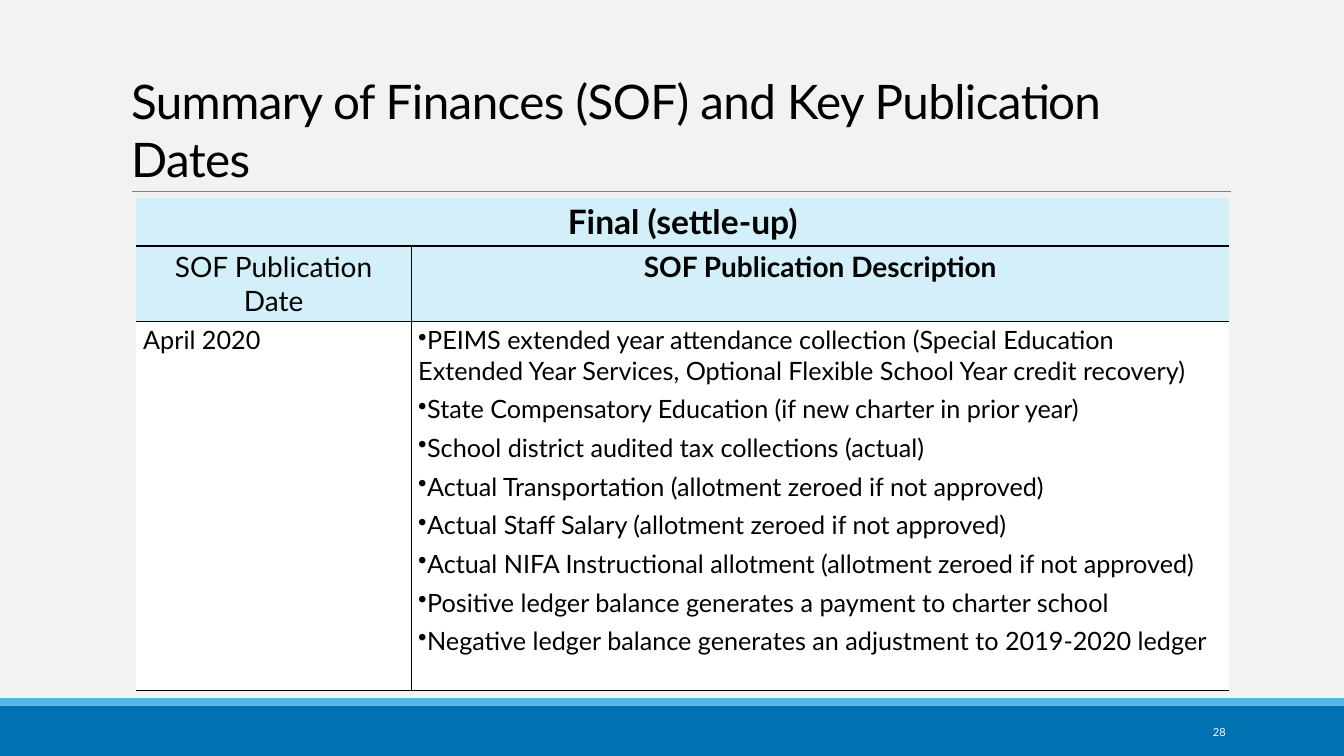
from dataclasses import dataclass

from lxml import etree
from pptx import Presentation
from pptx import util as u
from pptx.dml.color import RGBColor
from pptx.enum import shapes, text
from pptx.oxml.ns import qn

TITLE = "Summary of Finances (SOF) and Key Publication Dates"
PAGE_NUMBER = "28"
HEADING = "Final (settle-up)"
COLUMN_LABELS = ("SOF Publication Date", "SOF Publication Description")
DATE = "April 2020"
DESCRIPTIONS = (
    "PEIMS extended year attendance collection (Special Education Extended Year "
    "Services, Optional Flexible School Year credit recovery)",
    "State Compensatory Education (if new charter in prior year)",
    "School district audited tax collections (actual)",
    "Actual Transportation (allotment zeroed if not approved)",
    "Actual Staff Salary (allotment zeroed if not approved)",
    "Actual NIFA Instructional allotment (allotment zeroed if not approved)",
    "Positive ledger balance generates a payment to charter school",
    "Negative ledger balance generates an adjustment to 2019-2020 ledger",
)
COLUMN_WIDTHS = (6.93, 20.62)
ROW_HEIGHTS = (1.19, 1.07, 9.3)
SLIDE_WIDTH, SLIDE_HEIGHT = 33.87, 19.05
FOOTER_TOP, STRIP_HEIGHT = 17.78, 0.19


@dataclass(frozen=True)
class Theme:
    """Colours, font and type sizes of the slide."""
    font: str = "Lato"
    background: str = "F2F2F2"
    footer: str = "0072B2"
    strip: str = "56B4E9"
    rule: str = "808080"
    ink: str = "000000"
    paper: str = "FFFFFF"
    header: str = "D2EFFA"
    title_size: float = 34
    heading_size: float = 24
    label_size: float = 20
    body_size: float = 18
    number_size: float = 7.9


THEME = Theme()


def rgb(value):
    """Turn a hex string into a colour."""
    return RGBColor.from_string(value)


def box(left, top, width, height):
    """Give a position and size in centimetres."""
    return u.Cm(left), u.Cm(top), u.Cm(width), u.Cm(height)


def format_text(frame, size, color=THEME.ink, bold=False, align=text.PP_ALIGN.LEFT):
    """Format every paragraph and run of a text frame."""
    for paragraph in frame.paragraphs:
        paragraph.alignment = align
        for run in paragraph.runs:
            run.font.name = THEME.font
            run.font.size = u.Pt(size)
            run.font.bold = bold
            run.font.color.rgb = rgb(color)


def add_bar(slide, top, height, color):
    """Add a band across the full slide width."""
    bar = slide.shapes.add_shape(
        shapes.MSO_SHAPE.RECTANGLE, *box(0, top, SLIDE_WIDTH, height))
    bar.shadow.inherit = False
    bar.fill.solid()
    bar.fill.fore_color.rgb = rgb(color)
    bar.line.fill.background()


def add_rule(slide):
    """Add the thin line below the title."""
    rule = slide.shapes.add_connector(
        shapes.MSO_CONNECTOR.STRAIGHT, u.Cm(3.33), u.Cm(4.83), u.Cm(31.01), u.Cm(4.83))
    rule.line.color.rgb = rgb(THEME.rule)
    rule.line.width = u.Pt(0.5)
    etree.SubElement(rule._element.spPr, qn("a:effectLst"))


def add_title(slide):
    """Fill and place the title placeholder."""
    title = slide.shapes.title
    title.left, title.top, title.width, title.height = box(3.05, 0.79, 27.94, 4.04)
    frame = title.text_frame
    frame.text = TITLE
    frame.auto_size = text.MSO_AUTO_SIZE.NONE
    frame.vertical_anchor = text.MSO_ANCHOR.BOTTOM
    format_text(frame, THEME.title_size)
    frame.paragraphs[0].runs[0].font._element.set("spc", "-40")


def add_page_number(slide):
    """Add the page number in the footer."""
    frame = slide.shapes.add_textbox(*box(27.51, 17.93, 3.63, 1.02)).text_frame
    frame.word_wrap = True
    frame.vertical_anchor = text.MSO_ANCHOR.MIDDLE
    frame.text = PAGE_NUMBER
    format_text(frame, THEME.number_size, THEME.paper, align=text.PP_ALIGN.RIGHT)


def set_borders(cell, visible):
    """Draw the visible sides of a cell and clear the others."""
    properties = cell._tc.get_or_add_tcPr()
    for side in "LRTB":
        line = etree.SubElement(properties, qn(f"a:ln{side}"), w=str(u.Pt(1)))
        if side in visible:
            fill = etree.SubElement(line, qn("a:solidFill"))
            etree.SubElement(fill, qn("a:srgbClr"), val=THEME.ink)
        else:
            etree.SubElement(line, qn("a:noFill"))


def add_bullets(frame):
    """Turn the paragraphs of a frame into spaced bullets."""
    for index, paragraph in enumerate(frame.paragraphs):
        paragraph.level = 1
        properties = paragraph._p.get_or_add_pPr()
        properties.set("marL", "0")
        properties.set("indent", str(-u.Cm(0.97 if index else 0.79)))
        etree.SubElement(properties, qn("a:buChar"), char="•")
        if index:
            paragraph.space_before = u.Pt(6)


def add_schedule(slide):
    """Add the table of publication dates."""
    table = slide.shapes.add_table(
        3, 2, *box(3.43, 4.98, sum(COLUMN_WIDTHS), sum(ROW_HEIGHTS))).table
    table.first_row = table.horz_banding = False
    for column, width in zip(table.columns, COLUMN_WIDTHS):
        column.width = u.Cm(width)
    for row, height in zip(table.rows, ROW_HEIGHTS):
        row.height = u.Cm(height)
    table.cell(0, 0).merge(table.cell(0, 1))

    center, left = text.PP_ALIGN.CENTER, text.PP_ALIGN.LEFT
    cells = (
        (0, 0, HEADING, THEME.heading_size, True, center),
        (1, 0, COLUMN_LABELS[0], THEME.label_size, False, center),
        (1, 1, COLUMN_LABELS[1], THEME.label_size, True, center),
        (2, 0, DATE, THEME.body_size, False, left),
        (2, 1, "\n".join(DESCRIPTIONS), THEME.body_size, False, left),
    )
    for row, column, words, size, bold, align in cells:
        cell = table.cell(row, column)
        cell.margin_left = cell.margin_right = u.Cm(0.18)
        cell.margin_top = cell.margin_bottom = u.Cm(0.1)
        cell.text_frame.text = words
        format_text(cell.text_frame, size, bold=bold, align=align)
    add_bullets(table.cell(2, 1).text_frame)

    for row in range(3):
        for column in range(2):
            cell = table.cell(row, column)
            inner = ("R", "L")[column] if row else ""
            set_borders(cell, "B" + inner + ("T" if row else ""))
            cell.fill.solid()
            cell.fill.fore_color.rgb = rgb(THEME.header if row < 2 else THEME.paper)


def main():
    """Build the slide and save it."""
    presentation = Presentation()
    presentation.slide_width = u.Cm(SLIDE_WIDTH)
    presentation.slide_height = u.Cm(SLIDE_HEIGHT)
    slide = presentation.slides.add_slide(presentation.slide_layouts[5])
    slide.background.fill.solid()
    slide.background.fill.fore_color.rgb = rgb(THEME.background)
    add_bar(slide, FOOTER_TOP, SLIDE_HEIGHT - FOOTER_TOP, THEME.footer)
    add_bar(slide, FOOTER_TOP - STRIP_HEIGHT, STRIP_HEIGHT, THEME.strip)
    add_rule(slide)
    add_title(slide)
    add_page_number(slide)
    add_schedule(slide)
    presentation.save("out.pptx")


if __name__ == "__main__":
    main()
